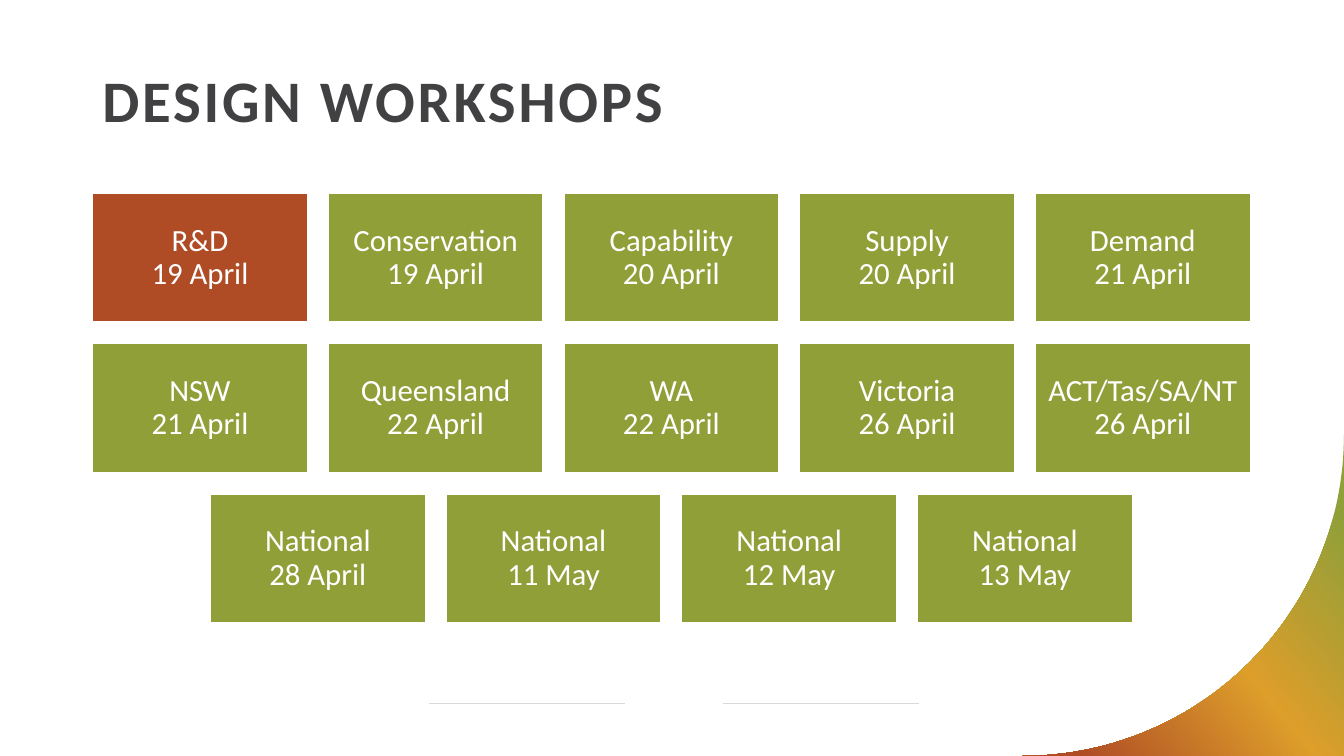
from dataclasses import dataclass
from math import cos, pi, sin

from lxml.etree import SubElement
from pptx import Presentation
from pptx.dml.color import RGBColor as Rgb
from pptx.enum.shapes import MSO_CONNECTOR as Link, MSO_SHAPE as Kind
from pptx.enum.text import MSO_ANCHOR as Anchor, PP_ALIGN as Align
from pptx.oxml.ns import qn
from pptx.util import Cm, Pt

COLORS = {
    "green": "919F39",
    "amber": "DD9E2A",
    "rust": "AF4C26",
    "text": "414042",
    "rule": "D9D8DA",
    "white": "FFFFFF",
}
FONT = "Calibri"
WIDE, HIGH = 33.87, 19.05

# Tile grid, in cm
LEFT, TOP = 2.33, 4.87
TILE_W, TILE_H = 5.42, 3.25
STEP_X, STEP_Y = 5.94, 3.79
MID = LEFT + (4 * STEP_X + TILE_W) / 2


@dataclass
class Shop:
    name: str
    date: str
    color: str = "green"


ROWS = [
    [
        Shop("R&D", "19 April", "rust"),
        Shop("Conservation", "19 April"),
        Shop("Capability", "20 April"),
        Shop("Supply", "20 April"),
        Shop("Demand", "21 April"),
    ],
    [
        Shop("NSW", "21 April"),
        Shop("Queensland", "22 April"),
        Shop("WA", "22 April"),
        Shop("Victoria", "26 April"),
        Shop("ACT/Tas/SA/NT", "26 April"),
    ],
    [
        Shop("National", "28 April"),
        Shop("National", "11 May"),
        Shop("National", "12 May"),
        Shop("National", "13 May"),
    ],
]


def rgb(name: str) -> Rgb:
    return Rgb.from_string(COLORS[name])


def write(para, text: str, size: int, color: str) -> None:
    para.text = text
    para.line_spacing = 0.9
    font = para.font
    font.name, font.size = FONT, Pt(size)
    font.color.rgb = rgb(color)


def add_rule(slide, left: float) -> None:
    y = Cm(17.73)
    rule = slide.shapes.add_connector(Link.STRAIGHT, Cm(left), y, Cm(left + 4.95), y)
    rule.line.color.rgb = rgb("rule")
    rule.line.width = Pt(0.5)
    SubElement(rule._element.spPr, qn("a:effectLst"))


def add_corner(slide) -> None:
    size, steps = 8.09, 60
    x, y = WIDE - size, HIGH - size
    angles = [pi / 2 * i / steps for i in range(steps + 1)]
    arc = [(Cm(x + size * cos(a)), Cm(y + size * sin(a))) for a in angles]
    form = slide.shapes.build_freeform(Cm(WIDE), Cm(HIGH))
    form.add_line_segments(arc, close=True)
    corner = form.convert_to_shape()
    corner.shadow.inherit = False
    corner.line.fill.background()

    # Three-colour gradient, green at the top right
    corner.fill.gradient()
    corner.fill.gradient_angle = 220
    stops = corner._element.spPr.find(".//" + qn("a:gsLst"))
    stops.clear()
    for spot, color in ((12, "green"), (50, "amber"), (91, "rust")):
        stop = SubElement(stops, qn("a:gs"), pos=str(spot * 1000))
        SubElement(stop, qn("a:srgbClr"), val=COLORS[color])


def add_title(slide, text: str) -> None:
    box = slide.shapes.add_textbox(Cm(LEFT), Cm(1.68), Cm(29.21), Cm(2.59))
    box.text_frame.word_wrap = True
    para = box.text_frame.paragraphs[0]
    write(para, text, 42, "text")
    para.font.bold = True
    para.runs[0]._r.get_or_add_rPr().set("spc", "200")


def add_tile(slide, shop: Shop, left: float, top: float) -> None:
    tile = slide.shapes.add_shape(
        Kind.RECTANGLE, Cm(left), Cm(top), Cm(TILE_W), Cm(TILE_H)
    )
    tile.shadow.inherit = False
    tile.fill.solid()
    tile.fill.fore_color.rgb = rgb(shop.color)
    tile.line.color.rgb = rgb("white")
    tile.line.width = Pt(1)
    frame = tile.text_frame
    frame.word_wrap = True
    frame.vertical_anchor = Anchor.MIDDLE
    frame.margin_left = frame.margin_right = Cm(0.23)
    frame.margin_top = frame.margin_bottom = Cm(0.23)
    para = frame.paragraphs[0]
    write(para, f"{shop.name}\n{shop.date}", 22, "white")
    para.alignment = Align.CENTER


def main() -> None:
    deck = Presentation()
    deck.slide_width, deck.slide_height = Cm(WIDE), Cm(HIGH)
    slide = deck.slides.add_slide(deck.slide_layouts[6])

    # Background decoration
    for left in (10.8, 18.21):
        add_rule(slide, left)
    add_corner(slide)

    # Title and centred rows of workshops
    add_title(slide, "DESIGN WORKSHOPS")
    for row, shops in enumerate(ROWS):
        start = MID - ((len(shops) - 1) * STEP_X + TILE_W) / 2
        for col, shop in enumerate(shops):
            add_tile(slide, shop, start + col * STEP_X, TOP + row * STEP_Y)

    deck.save("out.pptx")


if __name__ == "__main__":
    main()
